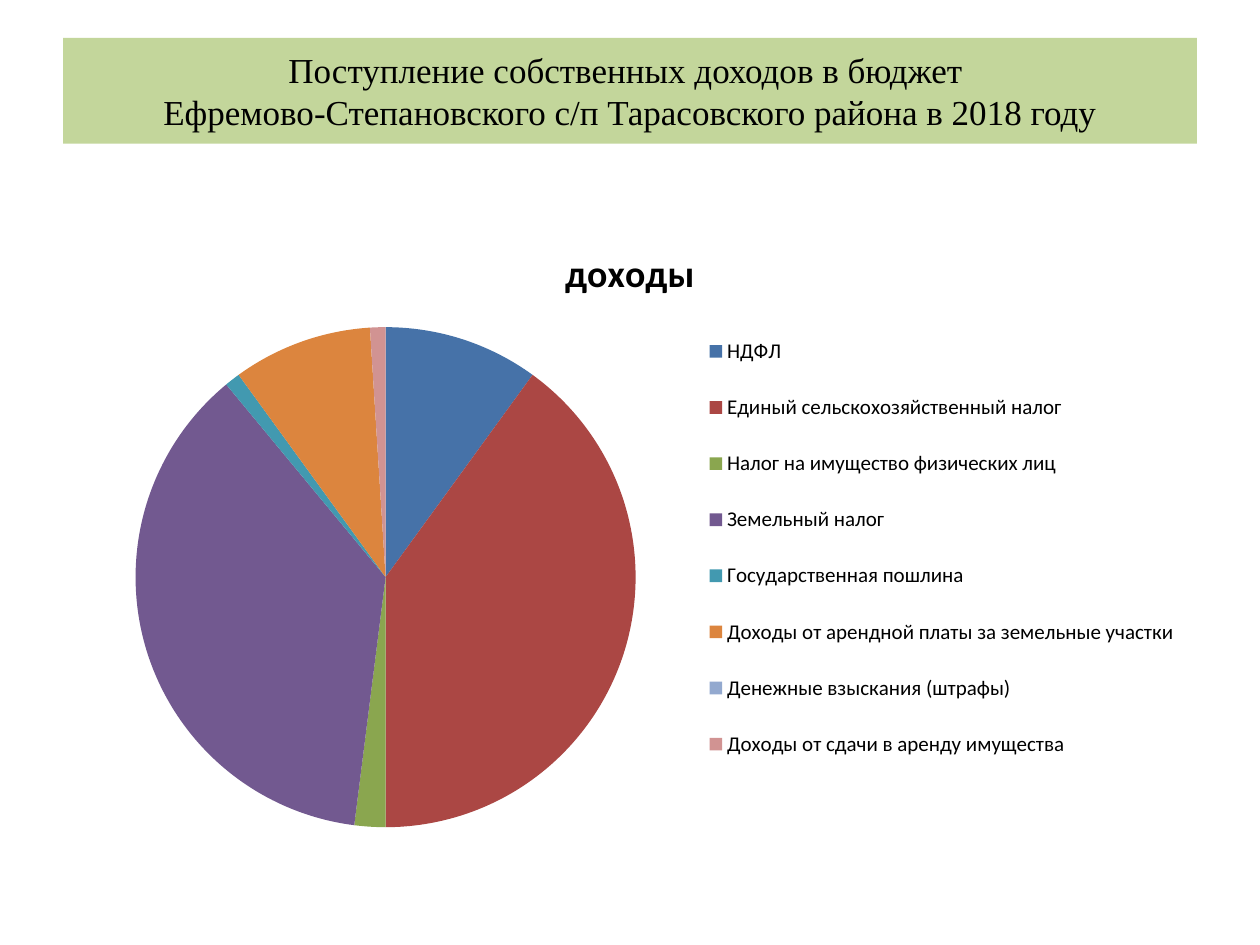
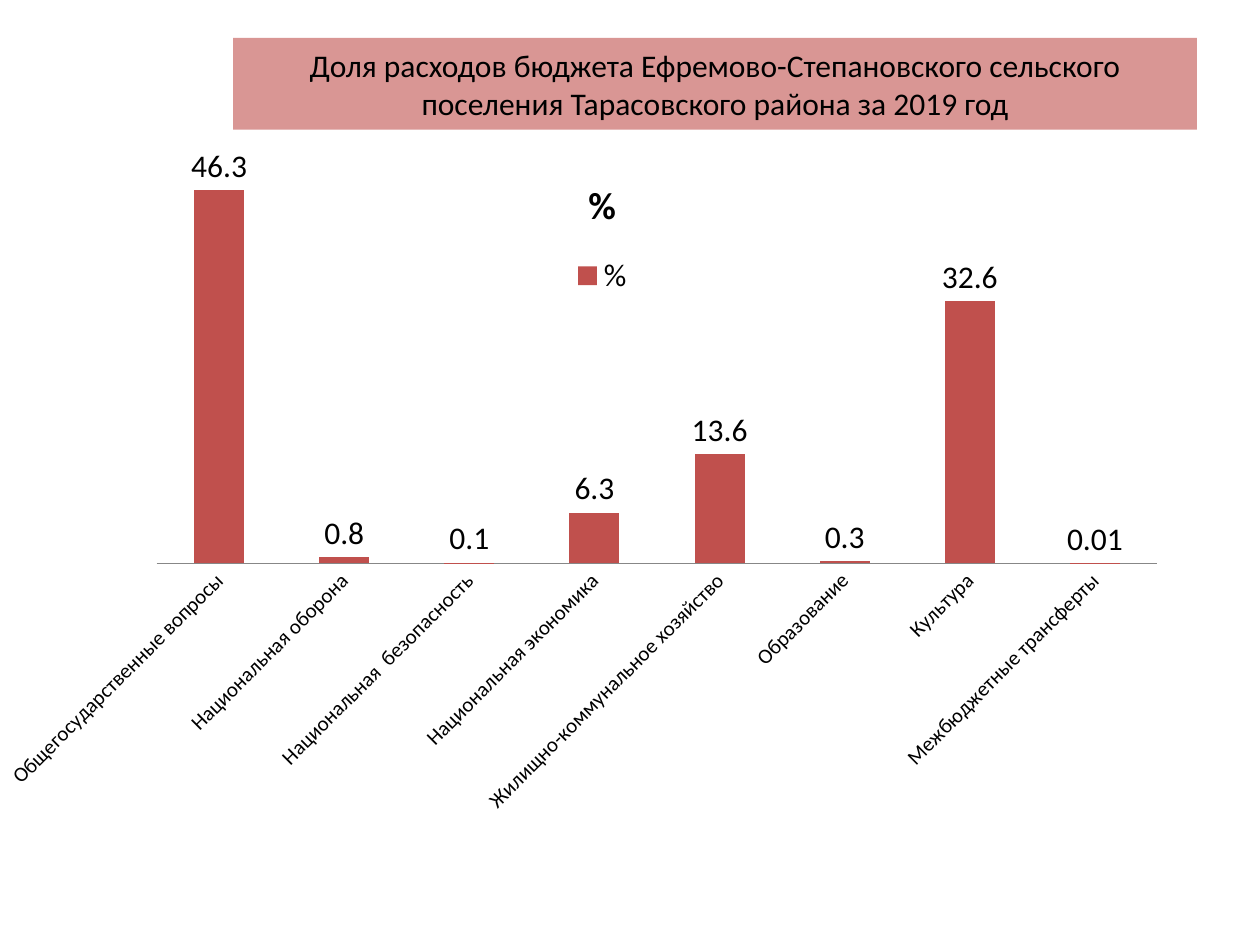
from lxml import etree
from pptx import Presentation
from pptx.chart.data import CategoryChartData
from pptx.dml.color import RGBColor
from pptx.enum.chart import XL_CHART_TYPE, XL_LABEL_POSITION, XL_LEGEND_POSITION, XL_TICK_MARK
from pptx.enum.text import MSO_ANCHOR, MSO_AUTO_SIZE, PP_ALIGN
from pptx.oxml.ns import qn
from pptx.util import Inches, Pt

PIE, COLUMN = XL_CHART_TYPE.PIE, XL_CHART_TYPE.COLUMN_CLUSTERED
RIGHT, TOP = XL_LEGEND_POSITION.RIGHT, XL_LEGEND_POSITION.TOP
OUTSIDE_END = XL_LABEL_POSITION.OUTSIDE_END
NO_TICK = XL_TICK_MARK.NONE
MIDDLE, CENTER = MSO_ANCHOR.MIDDLE, PP_ALIGN.CENTER
NO_AUTOFIT = MSO_AUTO_SIZE.NONE

BLACK = RGBColor(0x00, 0x00, 0x00)
GREEN_BAND = RGBColor(0xC3, 0xD6, 0x9B)
PINK_BAND = RGBColor(0xD9, 0x96, 0x94)
AXIS_GREY = RGBColor(0x87, 0x87, 0x87)
RED = RGBColor(0xC0, 0x50, 0x4D)
SLICE_COLORS = [
    RGBColor(0x46, 0x72, 0xA8), RGBColor(0xAB, 0x47, 0x44),
    RGBColor(0x8A, 0xA6, 0x4F), RGBColor(0x72, 0x59, 0x90),
    RGBColor(0x42, 0x99, 0xB0), RGBColor(0xDC, 0x85, 0x3E),
    RGBColor(0x93, 0xA9, 0xCF), RGBColor(0xD1, 0x93, 0x92),
]
BODY_FONT, SERIF_FONT = "Calibri", "Times New Roman"

INCOME = {
    "НДФЛ": 10,
    "Единый сельскохозяйственный налог": 40,
    "Налог на имущество физических лиц": 2,
    "Земельный налог": 37,
    "Государственная пошлина": 1,
    "Доходы от арендной платы за земельные участки": 9,
    "Денежные взыскания (штрафы)": 0,
    "Доходы от сдачи в аренду имущества": 1,
}
EXPENSES = {
    "Общегосударственные вопросы": 46.3,
    "Национальная оборона": 0.8,
    "Национальная  безопасность": 0.1,
    "Национальная экономика": 6.3,
    "Жилищно-коммунальное хозяйство": 13.6,
    "Образование": 0.3,
    "Культура": 32.6,
    "Межбюджетные трансферты": 0.01,
}


def style_font(font, size, name=BODY_FONT, bold=False):
    font.size = Pt(size)
    font.name = name
    font.bold = bold
    font.color.rgb = BLACK


def set_layout(parent, index, x, y, w, h, inner=False):
    for old in parent.findall(qn("c:layout")):
        parent.remove(old)
    layout = etree.Element(qn("c:layout"))
    manual = etree.SubElement(layout, qn("c:manualLayout"))
    settings = [("layoutTarget", "inner")] if inner else []
    settings += [("xMode", "edge"), ("yMode", "edge"),
                 ("x", x), ("y", y), ("w", w), ("h", h)]
    for tag, value in settings:
        etree.SubElement(manual, qn(f"c:{tag}")).set("val", str(value))
    parent.insert(index, layout)


def add_title_band(s, box, text, fill, size, font_name):
    title = s.shapes.title
    title.left, title.top, title.width, title.height = map(Inches, box)
    title.fill.solid()
    title.fill.fore_color.rgb = fill
    tf = title.text_frame
    tf.text = text
    tf.word_wrap = True
    tf.auto_size = NO_AUTOFIT
    tf.vertical_anchor = MIDDLE
    p = tf.paragraphs[0]
    p.alignment = CENTER
    for r in p.runs:
        style_font(r.font, size, font_name)


def add_budget_chart(s, box, kind, values, series_name, title, legend_position, plot_layout):
    data = CategoryChartData()
    data.categories = list(values)
    data.add_series(series_name, list(values.values()))
    chart = s.shapes.add_chart(kind, *map(Inches, box), data).chart
    style_font(chart.font, 18)
    chart.has_title = True
    chart.chart_title.include_in_layout = False
    tf = chart.chart_title.text_frame
    tf.text = title
    style_font(tf.paragraphs[0].runs[0].font, 21.6, bold=True)
    chart.has_legend = True
    chart.legend.position = legend_position
    chart.legend.include_in_layout = False
    chart.plots[0].vary_by_categories = kind == PIE
    set_layout(chart.element.find(".//" + qn("c:plotArea")), 0, *plot_layout, inner=True)
    return chart


def add_income_pie(s, box):
    chart = add_budget_chart(s, box, PIE, INCOME, "доходы", "доходы", RIGHT,
                             (0.064, 0.171, 0.441, 0.802))
    style_font(chart.legend.font, 12)
    set_layout(chart.element.find(".//" + qn("c:legend")), 1, 0.56, 0.14, 0.43, 0.77)
    for i, color in enumerate(SLICE_COLORS):
        fill = chart.plots[0].series[0].points[i].format.fill
        fill.solid()
        fill.fore_color.rgb = color


def add_expense_columns(s, box):
    chart = add_budget_chart(s, box, COLUMN, EXPENSES, "%", "%", TOP,
                             (0.13, 0.015, 0.831, 0.506))
    style_font(chart.legend.font, 18)
    plot = chart.plots[0]
    plot.gap_width = 150
    fill = plot.series[0].format.fill
    fill.solid()
    fill.fore_color.rgb = RED
    plot.has_data_labels = True
    labels = plot.data_labels
    labels.show_value = True
    labels.position = OUTSIDE_END
    style_font(labels.font, 18)

    axis = chart.category_axis
    axis.major_tick_mark = NO_TICK
    axis.format.line.color.rgb = AXIS_GREY
    axis.format.line.width = Pt(0.75)
    style_font(axis.tick_labels.font, 12)
    body = axis.tick_labels.font._element.getparent().getparent().getparent().find(qn("a:bodyPr"))
    if body is None:
        body = chart.element.find(".//" + qn("c:catAx")).find(".//" + qn("a:bodyPr"))
    body.set("rot", "-2700000")
    body.set("vert", "horz")

    value_axis = chart.value_axis
    value_axis.minimum_scale = 0
    value_axis.maximum_scale = 50
    value_axis.has_major_gridlines = False
    value_axis.visible = False


def build_income_slide(prs, layout):
    s = prs.slides.add_slide(layout)
    add_title_band(s, (0.5, 0.3, 9, 0.84),
                   "Поступление собственных доходов в бюджет \v"
                   "Ефремово-Степановского с/п Тарасовского района в 2018 году",
                   GREEN_BAND, 20, SERIF_FONT)
    add_income_pie(s, (0.5, 1.75, 9, 4.95))


def build_expense_slide(prs, layout):
    s = prs.slides.add_slide(layout)
    add_title_band(s, (1.85, 0.3, 7.65, 0.73),
                   "Доля расходов бюджета Ефремово-Степановского сельского "
                   "поселения Тарасовского района за 2019 год",
                   PINK_BAND, 18, BODY_FONT)
    add_expense_columns(s, (0, 1.17, 9.56, 6.33))


def main():
    prs = Presentation()
    prs.slide_width, prs.slide_height = Inches(10), Inches(7.5)
    title_only = prs.slide_layouts[5]
    build_income_slide(prs, title_only)
    build_expense_slide(prs, title_only)
    prs.save("out.pptx")


if __name__ == "__main__":
    main()
